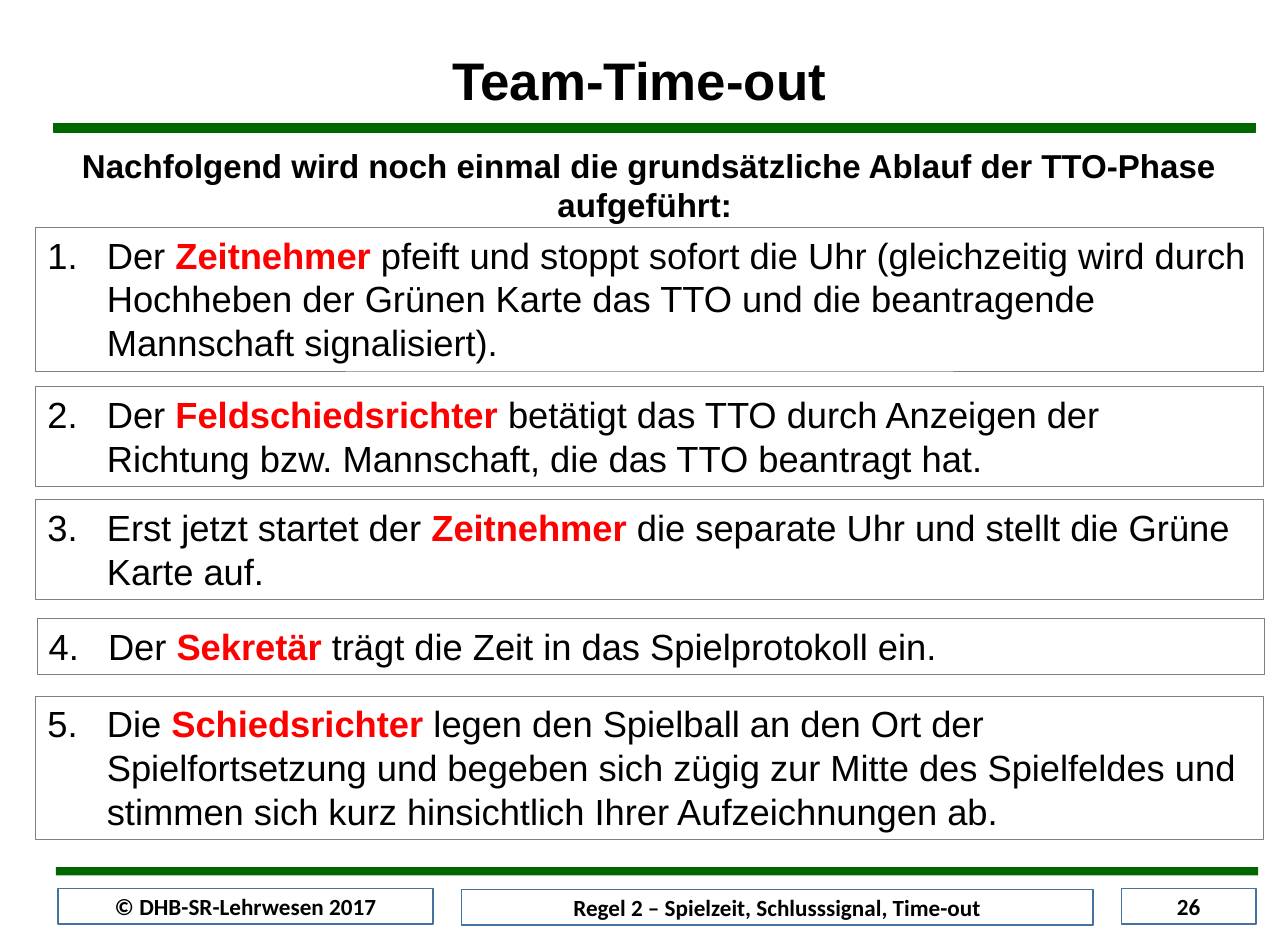
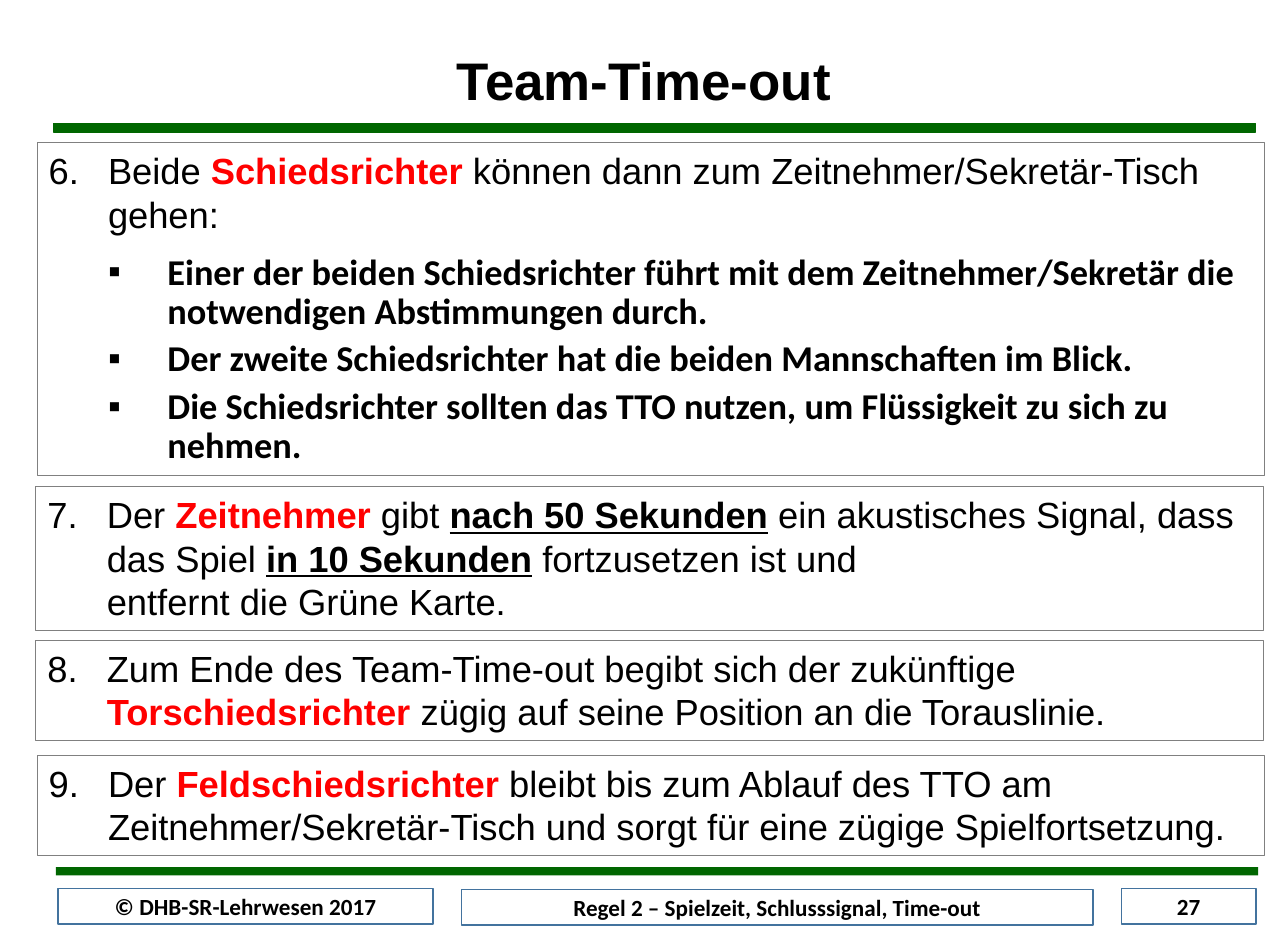
from lxml import etree
from pptx import Presentation
from pptx.dml.color import RGBColor
from pptx.enum.shapes import MSO_SHAPE
from pptx.enum.text import MSO_ANCHOR, MSO_AUTO_SIZE, PP_ALIGN
from pptx.oxml.ns import qn
from pptx.util import Inches, Pt

RECTANGLE = MSO_SHAPE.RECTANGLE
CENTER, LEFT = PP_ALIGN.CENTER, PP_ALIGN.LEFT
TOP, MIDDLE = MSO_ANCHOR.TOP, MSO_ANCHOR.MIDDLE
FIT_SHAPE, NO_FIT = MSO_AUTO_SIZE.SHAPE_TO_FIT_TEXT, MSO_AUTO_SIZE.NONE

COLORS = {
    "band": "006600",
    "footer line": "43739E",
    "step line": "808080",
    "role": "FF0000",
    "text": "000000",
    "white": "FFFFFF",
}
HEADING_FONT, FOOTER_FONT = "Arial", "Calibri"
STEP_WIDTH = 10.32
FIRST_PAGE = 26
LINE_BREAK = ("", "break")

# Bands: left, top, outline width
BANDS = [(0.45, 1.04, 0.75), (0.47, 7.29, 0)]

# Steps: left, top, height, runs as (text, style), sub-points
SLIDES = [
    {
        "title width": 3.39,
        "intro": "Nachfolgend wird noch einmal die grundsätzliche Ablauf "
                 "der TTO-Phase aufgeführt: ",
        "steps": [
            (0.3, 1.91, 1.21, [
                ("Der ", "plain"), ("Zeitnehmer ", "role"),
                ("pfeift und stoppt sofort die Uhr (gleichzeitig wird durch "
                 "Hochheben der Grünen Karte das TTO und die beantragende "
                 "Mannschaft signalisiert).", "plain")], []),
            (0.3, 3.25, 0.84, [
                ("Der ", "plain"), ("Feldschiedsrichter", "role"),
                (" betätigt das TTO durch Anzeigen der Richtung bzw. "
                 "Mannschaft, die das TTO beantragt hat.", "plain")], []),
            (0.3, 4.2, 0.84, [
                ("Erst jetzt startet der ", "plain"), ("Zeitnehmer", "role"),
                (" die separate Uhr und stellt die Grüne Karte auf.",
                 "plain")], []),
            (0.31, 5.2, 0.47, [
                ("Der ", "plain"), ("Sekretär", "role"),
                (" trägt die Zeit in das Spielprotokoll ein.", "plain")], []),
            (0.3, 5.85, 1.21, [
                ("Die ", "plain"), ("Schiedsrichter", "role"),
                (" legen den Spielball an den Ort der Spielfortsetzung und "
                 "begeben sich zügig zur Mitte des Spielfeldes und stimmen "
                 "sich kurz hinsichtlich Ihrer Aufzeichnungen ab.",
                 "plain")], []),
        ],
    },
    {
        "title width": 3.47,
        "intro": "",
        "steps": [
            (0.31, 1.2, 2.8, [
                ("Beide ", "plain"), ("Schiedsrichter ", "role"),
                ("können dann zum Zeitnehmer/Sekretär-Tisch gehen:",
                 "plain")], [
                "Einer der beiden Schiedsrichter führt mit dem "
                "Zeitnehmer/Sekretär die notwendigen Abstimmungen durch.",
                "Der zweite Schiedsrichter hat die beiden Mannschaften "
                "im Blick.",
                "Die Schiedsrichter sollten das TTO nutzen, um Flüssigkeit "
                "zu sich zu nehmen."]),
            (0.3, 4.09, 1.21, [
                ("Der ", "plain"), ("Zeitnehmer", "role"), (" gibt ", "plain"),
                ("nach 50 Sekunden", "time"),
                (" ein akustisches Signal, dass das Spiel ", "plain"),
                ("in 10 Sekunden", "time"),
                (" fortzusetzen ist und ", "plain"), LINE_BREAK,
                ("entfernt die Grüne Karte.", "plain")], []),
            (0.3, 5.38, 0.84, [
                ("Zum Ende des Team-Time-out begibt sich der zukünftige ",
                 "plain"),
                ("Torschiedsrichter", "role"),
                (" zügig auf seine Position an die Torauslinie.",
                 "plain")], []),
            (0.31, 6.35, 0.84, [
                ("Der ", "plain"), ("Feldschiedsrichter", "role"),
                (" bleibt bis zum Ablauf des TTO am Zeitnehmer/Sekretär-Tisch "
                 "und sorgt für eine zügige Spielfortsetzung.", "plain")], []),
        ],
    },
]


def add_box(slide, left, top, width, height, fill, line, line_width):
    """Add a rectangle; fill and line are colour names or None."""
    shape = slide.shapes.add_shape(
        RECTANGLE, Inches(left), Inches(top), Inches(width), Inches(height))
    shape.shadow.inherit = False
    if fill:
        shape.fill.solid()
        shape.fill.fore_color.rgb = RGBColor.from_string(COLORS[fill])
    else:
        shape.fill.background()
    if line:
        shape.line.color.rgb = RGBColor.from_string(COLORS[line])
        shape.line.width = Pt(line_width)
    else:
        shape.line.fill.background()
    shape.text_frame.word_wrap = True
    return shape


def add_run(paragraph, text, font, size, bold=True, color="text"):
    run = paragraph.add_run()
    run.text = text
    run.font.name = font
    run.font.size = Pt(size)
    run.font.bold = bold
    run.font.color.rgb = RGBColor.from_string(COLORS[color])
    return run


presentation = Presentation()
presentation.slide_width = Inches(10.83)
presentation.slide_height = Inches(7.92)
title_only = presentation.slide_layouts[5]
step_number = 0

for page, content in enumerate(SLIDES, FIRST_PAGE):
    slide = presentation.slides.add_slide(title_only)

    # Bands and footer
    for left, top, line_width in BANDS:
        add_box(slide, left, top, 10.11, 0.07, "band",
                "band" if line_width else None, line_width)
    footers = [
        (0.49, 7.47, 3.15, "© DHB-SR-Lehrwesen 2017"),
        (3.88, 7.48, 5.31, "Regel 2 – Spielzeit, Schlusssignal, Time-out"),
        (9.43, 7.47, 1.13, str(page)),
    ]
    for left, top, width, text in footers:
        footer = add_box(slide, left, top, width, 0.3,
                         "white", "footer line", 1)
        footer.text_frame.vertical_anchor = MIDDLE
        paragraph = footer.text_frame.paragraphs[0]
        paragraph.alignment = CENTER
        add_run(paragraph, text, FOOTER_FONT, 14)

    # Title
    title = slide.shapes.title
    title.left, title.top = Inches(3.68), Inches(0.41)
    title.width, title.height = Inches(content["title width"]), Inches(0.53)
    title.text_frame.auto_size = NO_FIT
    title.text_frame.vertical_anchor = TOP
    paragraph = title.text_frame.paragraphs[0]
    paragraph.alignment = CENTER
    paragraph.line_spacing = 0.9
    add_run(paragraph, "Team-Time-out", HEADING_FONT, 32)

    # Introduction
    if content["intro"]:
        intro = slide.shapes.add_textbox(
            Inches(0.3), Inches(1.17), Inches(STEP_WIDTH), Inches(0.77))
        intro.text_frame.word_wrap = True
        intro.text_frame.auto_size = FIT_SHAPE
        paragraph = intro.text_frame.paragraphs[0]
        paragraph.alignment = CENTER
        add_run(paragraph, content["intro"], HEADING_FONT, 20)

    # Numbered steps
    for left, top, height, runs, points in content["steps"]:
        step_number += 1
        step = add_box(slide, left, top, STEP_WIDTH, height,
                       None, "step line", 0.25)
        frame = step.text_frame
        frame.vertical_anchor = TOP
        frame.auto_size = FIT_SHAPE
        paragraph = frame.paragraphs[0]
        properties = paragraph._p.get_or_add_pPr()
        properties.set("marL", str(Inches(0.5)))
        properties.set("indent", str(-Inches(0.5)))
        etree.SubElement(properties, qn("a:buFont"), typeface=HEADING_FONT)
        etree.SubElement(properties, qn("a:buAutoNum"),
                         type="arabicPeriod", startAt=str(step_number))
        paragraph.alignment = LEFT
        paragraph.space_after = Pt(6)
        for text, style in runs:
            if style == "break":
                paragraph.add_line_break()
                continue
            run = add_run(paragraph, text, HEADING_FONT, 22,
                          bold=style != "plain",
                          color="role" if style == "role" else "text")
            if style == "time":
                run.font.underline = True

        for point in points:
            paragraph = frame.add_paragraph()
            paragraph.level = 1
            properties = paragraph._p.get_or_add_pPr()
            properties.set("marL", str(Inches(1)))
            properties.set("indent", str(-Inches(0.5)))
            etree.SubElement(properties, qn("a:buFont"), typeface=HEADING_FONT)
            etree.SubElement(properties, qn("a:buChar"), char="▪")
            paragraph.alignment = LEFT
            paragraph.line_spacing = 0.9
            paragraph.space_before = Pt(5)
            add_run(paragraph, point, FOOTER_FONT, 22)

presentation.save("out.pptx")
